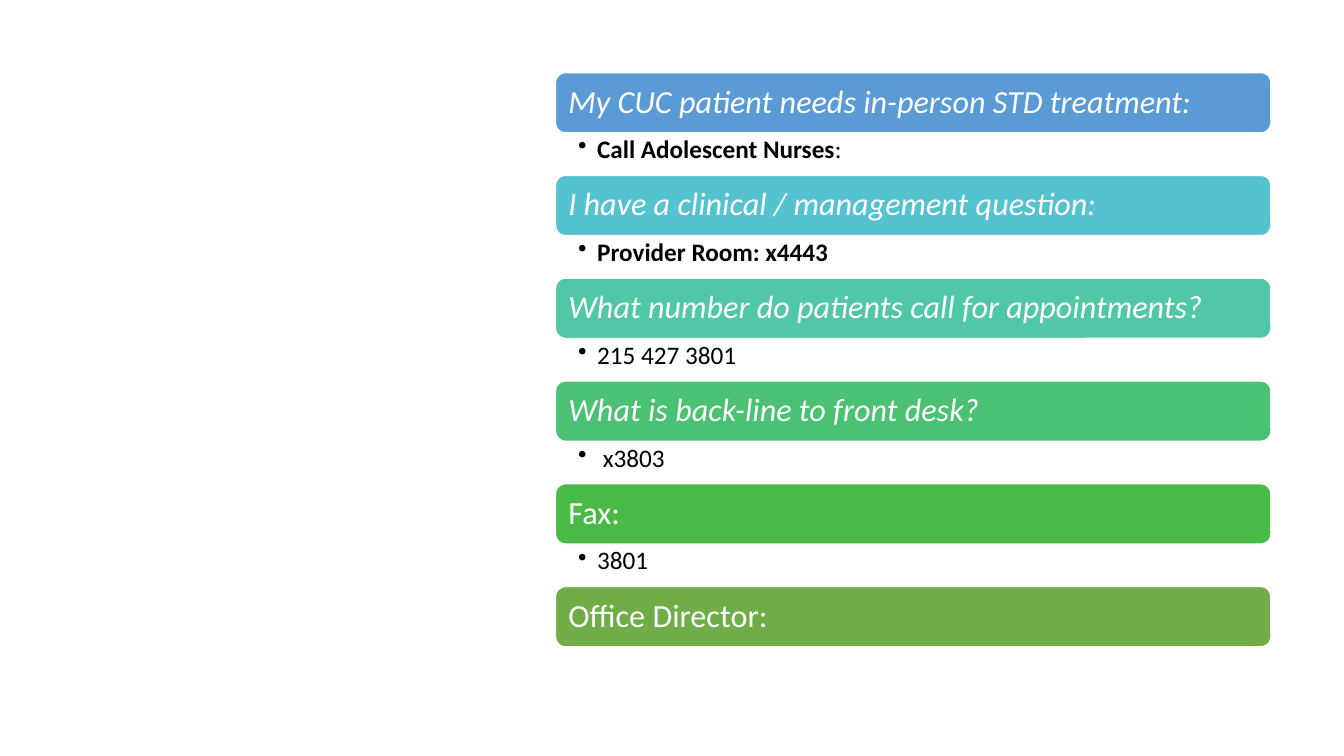
from lxml import etree
from pptx import Presentation
from pptx import util as u
from pptx.dml.color import RGBColor
from pptx.enum import shapes, text
from pptx.oxml.ns import qn

COLORS = {
    "white": "FFFFFF", "black": "000000",
    "blue": "5B9BD5", "cyan": "55C3CF", "teal": "50C8A7",
    "mint": "4BC174", "green": "4ABA46", "olive": "70AD47",
}

# Question, italic, bar colour, answer as (text, bold) runs
CONTACTS = [
    ("My CUC patient needs in-person STD treatment:", True, "blue",
     [("Call Adolescent Nurses", True), (":", False)]),
    ("I have a clinical / management question:", True, "cyan",
     [("Provider Room: x4443", True)]),
    ("What number do patients call for appointments?", True, "teal",
     [("215 427 3801", False)]),
    ("What is back-line to front desk?", True, "mint", [(" x3803", False)]),
    ("Fax:", False, "green", [("3801", False)]),
    ("Office Director:", False, "olive", []),
]

LEFT, TOP, WIDTH = 14.0, 1.83, 18.03
BAR_HEIGHT, ANSWER_HEIGHT, PITCH = 1.52, 1.06, 2.59


def write(paragraph, words, size, color, bold=False, italic=False):
    paragraph.alignment = text.PP_ALIGN.LEFT
    paragraph.line_spacing = 0.9
    run = paragraph.add_run()
    run.text = words
    run.font.name = "Calibri"
    run.font.size = u.Pt(size)
    run.font.bold = bold
    run.font.italic = italic
    run.font.color.rgb = RGBColor.from_string(COLORS[color])


def set_frame(frame, left, top, right, bottom, anchor):
    frame.word_wrap = True
    frame.vertical_anchor = anchor
    frame.margin_left, frame.margin_top = u.Cm(left), u.Cm(top)
    frame.margin_right, frame.margin_bottom = u.Cm(right), u.Cm(bottom)


prs = Presentation()
prs.slide_width, prs.slide_height = u.Cm(33.87), u.Cm(19.05)
slide = prs.slides.add_slide(prs.slide_layouts[6])

for row, (question, italic, color, answer) in enumerate(CONTACTS):
    top = TOP + row * PITCH

    # Question bar
    bar = slide.shapes.add_shape(
        shapes.MSO_SHAPE.ROUNDED_RECTANGLE,
        u.Cm(LEFT), u.Cm(top), u.Cm(WIDTH), u.Cm(BAR_HEIGHT))
    bar.shadow.inherit = False
    bar.fill.solid()
    bar.fill.fore_color.rgb = RGBColor.from_string(COLORS[color])
    bar.line.color.rgb = RGBColor.from_string(COLORS["white"])
    bar.line.width = u.Pt(1)
    set_frame(bar.text_frame, 0.25, 0.25, 0.25, 0.25, text.MSO_ANCHOR.MIDDLE)
    write(bar.text_frame.paragraphs[0], question, 23, "white", italic=italic)

    # Bulleted answer below the bar
    if answer:
        reply = slide.shapes.add_textbox(
            u.Cm(LEFT), u.Cm(top + BAR_HEIGHT + 0.02), u.Cm(WIDTH), u.Cm(ANSWER_HEIGHT))
        set_frame(reply.text_frame, 0.57, 0.08, 0.46, 0.08, text.MSO_ANCHOR.TOP)
        bullet = reply.text_frame.paragraphs[0]
        bullet.level = 1
        for words, bold in answer:
            write(bullet, words, 18, "black", bold=bold)
        properties = bullet._p.get_or_add_pPr()
        properties.set("marL", str(u.Cm(0.48)))
        properties.set("indent", str(-u.Cm(0.48)))
        etree.SubElement(properties, qn("a:buChar"), char="•")

prs.save("out.pptx")
